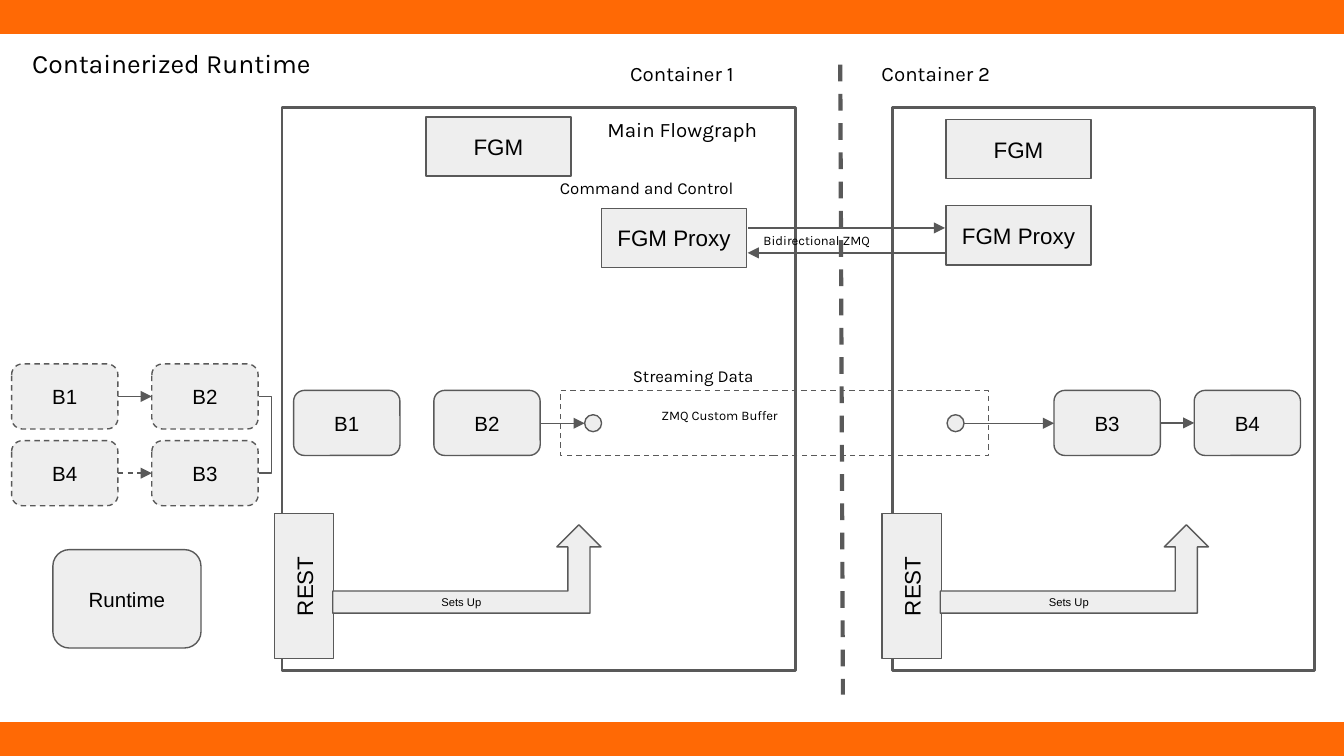
from lxml.etree import SubElement
from pptx import Presentation
from pptx.dml.color import RGBColor
from pptx.enum.dml import MSO_LINE
from pptx.enum.shapes import MSO_CONNECTOR, MSO_SHAPE
from pptx.enum.text import MSO_ANCHOR, PP_ALIGN
from pptx.oxml.ns import qn
from pptx.util import Cm, Pt

COLORS = {"bar": "FF6905", "box": "EEEEEE", "line": "595959", "text": "000000"}
BLOCK_W, BLOCK_H, BLOCK_STEP = 2.01, 1.23, 2.65
BOX_W, BOX_H = 2.74, 1.12
INSET = 0.25


def rgb(name):
    return RGBColor.from_string(COLORS[name])


def write(s, text, size, font, inset):
    tf = s.text_frame
    tf.text = text
    tf.word_wrap = True
    tf.margin_left = tf.margin_right = Cm(inset)
    tf.margin_top = tf.margin_bottom = Cm(inset)
    f = tf.paragraphs[0].runs[0].font
    f.name, f.size = font, Pt(size)
    f.color.rgb = rgb("text")


def add_label(sp, x, y, w, h, text, size, inset=0):
    s = sp.add_textbox(Cm(x), Cm(y), Cm(w), Cm(h))
    write(s, text, size, "Karla", inset)


def set_line(line, width, dashed):
    line.color.rgb = rgb("line")
    line.width = Pt(width)
    if dashed:
        line.dash_style = MSO_LINE.DASH


def add_shape(sp, kind, x, y, w, h, fill="box", width=0.75, dashed=False):
    s = sp.add_shape(kind, Cm(x), Cm(y), Cm(w), Cm(h))
    s.shadow.inherit = False
    if fill:
        s.fill.solid()
        s.fill.fore_color.rgb = rgb(fill)
    else:
        s.fill.background()
    if width:
        set_line(s.line, width, dashed)
    else:
        s.line.fill.background()
    return s


def add_text_shape(sp, kind, x, y, w, h, text, size, inset=0, dashed=False):
    s = add_shape(sp, kind, x, y, w, h, dashed=dashed)
    write(s, text, size, "Arial", inset)
    s.text_frame.vertical_anchor = MSO_ANCHOR.MIDDLE
    s.text_frame.paragraphs[0].alignment = PP_ALIGN.CENTER
    return s


def add_line(sp, x1, y1, x2, y2, kind=MSO_CONNECTOR.STRAIGHT,
             width=0.75, dashed=False, arrow=True):
    c = sp.add_connector(kind, Cm(x1), Cm(y1), Cm(x2), Cm(y2))
    set_line(c.line, width, dashed)
    if arrow:
        SubElement(c.line._get_or_add_ln(), qn("a:tailEnd"), type="triangle")
    SubElement(c._element.spPr, qn("a:effectLst"))
    return c


def add_block_pair(sp, x, y, names, dashed=False, linked=True, dashed_link=False):
    for i, name in enumerate(names):
        add_text_shape(sp, MSO_SHAPE.ROUNDED_RECTANGLE, x + i * BLOCK_STEP, y,
                       BLOCK_W, BLOCK_H, name, 11, dashed=dashed)
    if linked:
        mid = y + BLOCK_H / 2
        add_line(sp, x + BLOCK_W, mid, x + BLOCK_STEP, mid,
                 MSO_CONNECTOR.CURVE, dashed=dashed_link)


def add_box(sp, x, y, text):
    return add_text_shape(sp, MSO_SHAPE.RECTANGLE, x, y, BOX_W, BOX_H, text, 12, INSET)


def add_rest(sp, x):
    add_box(sp, x, 10.52, "REST").rotation = 270
    add_text_shape(sp, MSO_SHAPE.BENT_UP_ARROW, x + 1.91, 9.92, 5.07, 1.67,
                   "Sets Up", 6, INSET)


def add_return_link(sp, x, y1, y2):
    c = add_line(sp, x, y1, x + 0.01, y2, MSO_CONNECTOR.ELBOW, arrow=False)
    guides = c._element.spPr.find(qn("a:prstGeom")).get_or_add_avLst()
    SubElement(guides, qn("a:gd"), name="adj1", fmla="val 2400000")


def main():
    prs = Presentation()
    prs.slide_width, prs.slide_height = Cm(25.4), Cm(14.29)
    sp = prs.slides.add_slide(prs.slide_layouts[6]).shapes

    for y in (0, 13.65):
        add_shape(sp, MSO_SHAPE.RECTANGLE, 0, y, 25.4, 0.64, "bar", width=0)
    add_label(sp, 0.36, 0.64, 23.67, 1.6, "Containerized Runtime", 14.2, INSET)

    for x, w in ((5.33, 9.7), (16.87, 7.98)):
        add_shape(sp, MSO_SHAPE.RECTANGLE, x, 2.03, w, 10.65, fill=None, width=1.5)
    add_line(sp, 15.88, 1.22, 15.93, 13.13, width=2.25, dashed=True, arrow=False)

    add_block_pair(sp, 0.22, 6.88, ("B1", "B2"), dashed=True)
    add_block_pair(sp, 0.22, 8.33, ("B4", "B3"), dashed=True, dashed_link=True)
    add_return_link(sp, 4.89, 7.49, 8.94)
    add_block_pair(sp, 5.55, 7.38, ("B1", "B2"), linked=False)
    add_block_pair(sp, 19.92, 7.38, ("B3", "B4"))

    for x in (11.05, 17.9):
        add_shape(sp, MSO_SHAPE.OVAL, x, 7.84, 0.32, 0.32)
    for x1, x2 in ((10.21, 11.05), (18.22, 19.92)):
        add_line(sp, x1, 8, x2, 8)
    add_shape(sp, MSO_SHAPE.RECTANGLE, 10.59, 7.38, 8.09, BLOCK_H,
              fill=None, dashed=True)

    for x, y, text in ((8.05, 2.21, "FGM"), (17.88, 2.26, "FGM"),
                       (11.37, 3.94, "FGM Proxy"), (17.88, 3.89, "FGM Proxy")):
        add_box(sp, x, y, text)
    add_line(sp, 14.14, 4.31, 17.86, 4.31)
    add_line(sp, 17.86, 4.78, 14.13, 4.78)

    for x in (4.38, 15.86):
        add_rest(sp, x)
    add_text_shape(sp, MSO_SHAPE.ROUNDED_RECTANGLE, 1, 10.39, 2.8, 1.86, "Runtime", 11)

    for x, y, text, size in ((11.48, 2.21, "Main Flowgraph", 11),
                             (11.91, 1.15, "Container 1", 11),
                             (16.66, 1.15, "Container 2", 11),
                             (14.43, 4.4, "Bidirectional ZMQ", 7),
                             (12.5, 7.7, "ZMQ Custom Buffer", 7)):
        add_label(sp, x, y, 3.23, size * 0.044, text, size)
    add_label(sp, 11.71, 6.73, 2.9, 0.89, "Streaming Data", 9, INSET)
    add_label(sp, 10.33, 3.17, 3.9, 0.89, "Command and Control", 9, INSET)

    prs.save("out.pptx")


if __name__ == "__main__":
    main()
